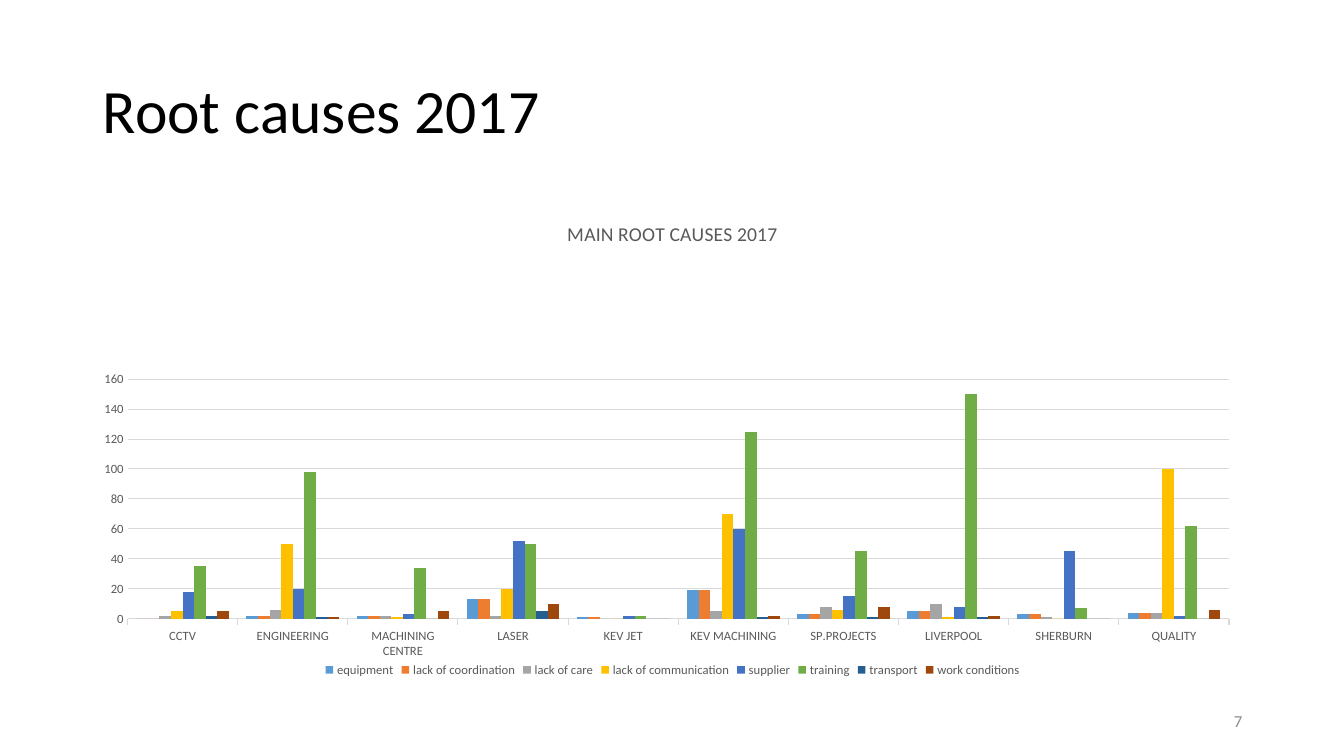
from lxml import etree
from pptx import Presentation
from pptx.chart.data import CategoryChartData
from pptx.dml.color import RGBColor
from pptx.enum.chart import XL_CHART_TYPE, XL_LEGEND_POSITION, XL_TICK_MARK
from pptx.enum.text import MSO_ANCHOR, PP_ALIGN
from pptx.oxml import parse_xml
from pptx.oxml.ns import nsdecls
from pptx.util import Inches, Pt

COLUMNS = XL_CHART_TYPE.COLUMN_CLUSTERED
BOTTOM = XL_LEGEND_POSITION.BOTTOM
TICK_OUT, TICK_NONE = XL_TICK_MARK.OUTSIDE, XL_TICK_MARK.NONE
MIDDLE = MSO_ANCHOR.MIDDLE
LEFT, RIGHT = PP_ALIGN.LEFT, PP_ALIGN.RIGHT

COLORS = {
    "background": "FFFFFF", "title": "000000", "number": "8C8C8C",
    "label": "595959", "grid": "D9D9D9",
    "equipment": "5B9BD5", "lack of coordination": "ED7D31",
    "lack of care": "A5A5A5", "lack of communication": "FFC000",
    "supplier": "4472C4", "training": "70AD47",
    "transport": "255E91", "work conditions": "9E480E",
}
DEPARTMENTS = ["CCTV", "ENGINEERING", "MACHINING CENTRE", "LASER", "KEV JET",
               "KEV MACHINING", "SP.PROJECTS", "LIVERPOOL", "SHERBURN", "QUALITY"]
ROOT_CAUSES = {
    "equipment": [0, 2, 2, 13, 1, 19, 3, 5, 3, 4],
    "lack of coordination": [0, 2, 2, 13, 1, 19, 3, 5, 3, 4],
    "lack of care": [2, 6, 2, 2, 0, 5, 8, 10, 1, 4],
    "lack of communication": [5, 50, 1, 20, 0, 70, 6, 1, 0, 100],
    "supplier": [18, 20, 3, 52, 2, 60, 15, 8, 45, 2],
    "training": [35, 98, 34, 50, 2, 125, 45, 150, 7, 62],
    "transport": [2, 1, 0, 5, 0, 1, 1, 1, 0, 0],
    "work conditions": [5, 1, 5, 10, 0, 2, 8, 2, 0, 6],
}


class SlideBuilder:
    def __init__(self, s, font="Calibri"):
        self.s = s
        self.font = font
        s.background.fill.solid()
        s.background.fill.fore_color.rgb = self.color("background")

    def color(self, name):
        return RGBColor.from_string(COLORS[name])

    def style(self, font, size, color):
        font.name = self.font
        font.size = Pt(size)
        font.bold = False
        font.color.rgb = self.color(color)

    def add_text(self, tf, text, size, color, align):
        tf.word_wrap = True
        tf.vertical_anchor = MIDDLE
        p = tf.paragraphs[0]
        p.alignment = align
        r = p.add_run()
        r.text = text
        self.style(r.font, size, color)
        return p

    def title(self, text, x, y, w, h):
        sp = self.s.shapes.title
        sp.left, sp.top, sp.width, sp.height = map(Inches, (x, y, w, h))
        p = self.add_text(sp.text_frame, text, 44, "title", LEFT)
        p.line_spacing = 0.9

    def text_box(self, text, x, y, w, h, size, color, align):
        sp = self.s.shapes.add_textbox(*map(Inches, (x, y, w, h)))
        self.add_text(sp.text_frame, text, size, color, align)

    def axis(self, axis, tick):
        axis.major_tick_mark = tick
        axis.minor_tick_mark = TICK_NONE
        self.style(axis.tick_labels.font, 9, "label")

    def line(self, line):
        line.width = Pt(0.75)
        line.color.rgb = self.color("grid")

    def plot_layout(self, chart, **box):
        layout = parse_xml(f'<c:layout {nsdecls("c")}><c:manualLayout/></c:layout>')
        settings = {"layoutTarget": "inner", "xMode": "edge", "yMode": "edge", **box}
        for tag, val in settings.items():
            etree.SubElement(layout[0], f"{{{layout.nsmap['c']}}}{tag}", val=str(val))
        plot_area = chart.element.chart.plotArea
        for old in plot_area.findall("c:layout", layout.nsmap):
            plot_area.remove(old)
        plot_area.insert(0, layout)

    def column_chart(self, title, categories, series, x, y, w, h):
        data = CategoryChartData()
        data.categories = categories
        for name, values in series.items():
            data.add_series(name, values)
        box = map(Inches, (x, y, w, h))
        chart = self.s.shapes.add_chart(COLUMNS, *box, data).chart
        self.style(chart.font, 10, "title")

        # Title and legend
        chart.has_title = True
        r = chart.chart_title.text_frame.paragraphs[0].add_run()
        r.text = title
        self.style(r.font, 14, "label")
        chart.chart_title.include_in_layout = False
        chart.has_legend = True
        chart.legend.position = BOTTOM
        chart.legend.include_in_layout = False
        self.style(chart.legend.font, 9, "label")

        # Axes
        self.axis(chart.category_axis, TICK_OUT)
        self.line(chart.category_axis.format.line)
        self.axis(chart.value_axis, TICK_NONE)
        chart.value_axis.format.line.fill.background()
        self.line(chart.value_axis.major_gridlines.format.line)
        chart.value_axis.minimum_scale = 0
        chart.value_axis.maximum_scale = 160
        chart.value_axis.major_unit = 20

        # Columns
        plot = chart.plots[0]
        plot.gap_width = 150
        plot.overlap = 0
        plot.vary_by_categories = False
        for ser in plot.series:
            ser.format.fill.solid()
            ser.format.fill.fore_color.rgb = self.color(ser.name)
        self.plot_layout(chart, x=0.03, y=0.37, w=0.95, h=0.5)


def main():
    prs = Presentation()
    prs.slide_width, prs.slide_height = Inches(13.33), Inches(7.5)
    title_only = prs.slide_layouts[5]
    slide = SlideBuilder(prs.slides.add_slide(title_only))

    # Heading, chart and page number
    slide.title("Root causes 2017", 0.92, 0.4, 11.5, 1.45)
    slide.column_chart("MAIN ROOT CAUSES 2017", DEPARTMENTS, ROOT_CAUSES,
                       0.92, 2, 11.5, 4.76)
    slide.text_box("7", 9.42, 6.95, 3, 0.4, 12, "number", RIGHT)
    prs.save("out.pptx")


if __name__ == "__main__":
    main()
